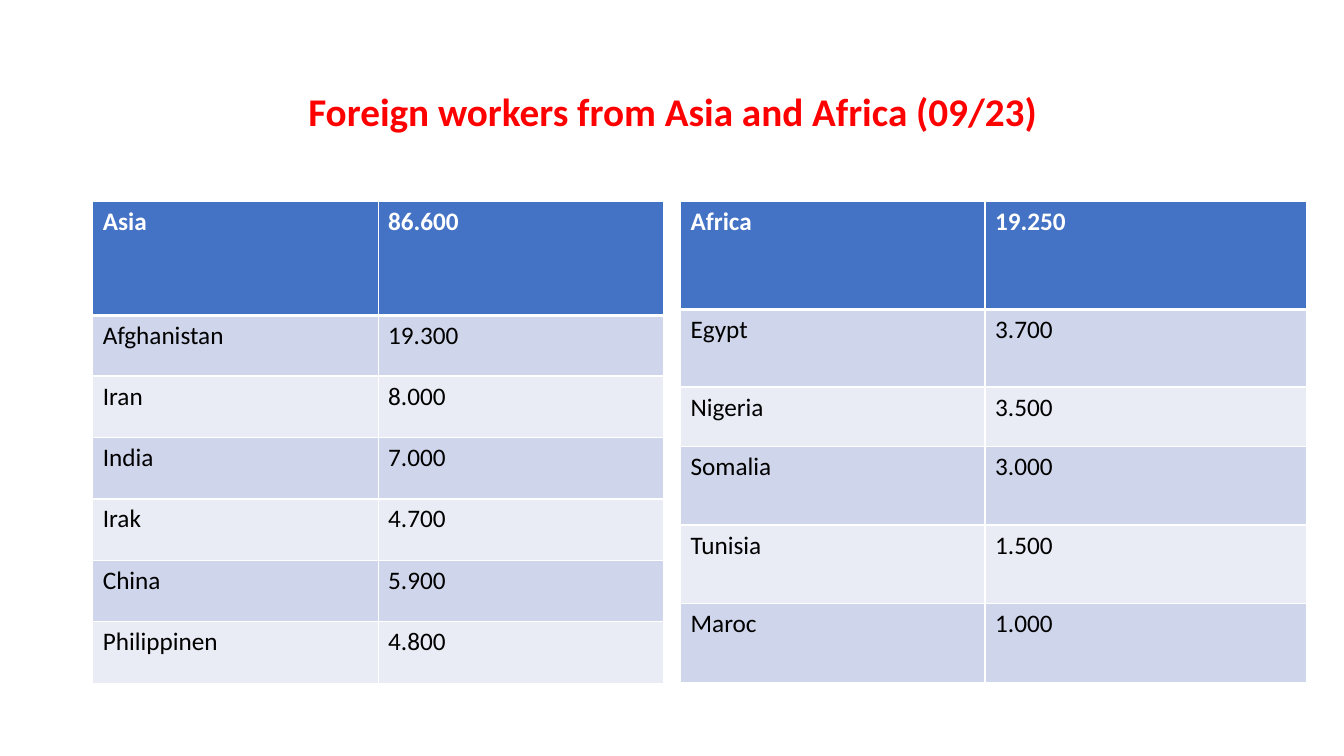
"""Builds a slide comparing foreign workers from Asia and Africa."""
from lxml import etree
from pptx import Presentation
from pptx.dml.color import RGBColor
from pptx.enum.text import MSO_ANCHOR, PP_ALIGN
from pptx.oxml.ns import qn
from pptx.util import Inches, Pt

TITLE = "Foreign workers from Asia and Africa (09/23)"
REGIONS = [
    {
        "left": 0.92,
        "columns": [2.83, 2.83],
        "heights": [1.13, 0.6, 0.61, 0.61, 0.61, 0.61, 0.61],
        "rows": [
            ("Asia", "86.600"),
            ("Afghanistan", "19.300"),
            ("Iran", "8.000"),
            ("India", "7.000"),
            ("Irak", "4.700"),
            ("China", "5.900"),
            ("Philippinen", "4.800"),
        ],
    },
    {
        "left": 6.75,
        "columns": [3.02, 3.19],
        "heights": [1.07, 0.77, 0.59, 0.78, 0.78, 0.78],
        "rows": [
            ("Africa", "19.250"),
            ("Egypt", "3.700"),
            ("Nigeria", "3.500"),
            ("Somalia", "3.000"),
            ("Tunisia", "1.500"),
            ("Maroc", "1.000"),
        ],
    },
]

FONT = "Calibri"
RED = RGBColor(0xFF, 0x00, 0x00)
WHITE = RGBColor(0xFF, 0xFF, 0xFF)
BLACK = RGBColor(0x00, 0x00, 0x00)
HEADER_BLUE = RGBColor(0x44, 0x72, 0xC4)
BANDS = [RGBColor(0xE9, 0xEB, 0xF5), RGBColor(0xCF, 0xD5, 0xEA)]
CENTER = PP_ALIGN.CENTER
MIDDLE = MSO_ANCHOR.MIDDLE
TABLE_TOP = 2
THIN, THICK = Pt(1), Pt(3)


def style_text(frame, size, color, bold):
    font = frame.paragraphs[0].runs[0].font
    font.name, font.size, font.bold = FONT, Pt(size), bold
    font.color.rgb = color


def add_title(slide):
    box = slide.shapes.add_textbox(Inches(0.92), Inches(0.4), Inches(11.5), Inches(1.45))
    frame = box.text_frame
    frame.word_wrap = True
    frame.vertical_anchor = MIDDLE
    frame.text = TITLE
    frame.paragraphs[0].alignment = CENTER
    frame.paragraphs[0].line_spacing = 0.9
    style_text(frame, 28, RED, True)


def set_borders(cell, row_index):
    widths = {
        "a:lnL": THIN,
        "a:lnR": THIN,
        "a:lnT": THICK if row_index == 1 else THIN,
        "a:lnB": THICK if row_index == 0 else THIN,
    }
    properties = cell._tc.get_or_add_tcPr()
    for tag, width in widths.items():
        line = etree.SubElement(properties, qn(tag), w=str(width))
        fill = etree.SubElement(line, qn("a:solidFill"))
        etree.SubElement(fill, qn("a:srgbClr"), val=str(WHITE))


def add_region(slide, region):
    rows, columns, heights = region["rows"], region["columns"], region["heights"]
    table = slide.shapes.add_table(
        len(rows), len(columns), Inches(region["left"]), Inches(TABLE_TOP),
        Inches(sum(columns)), Inches(sum(heights)),
    ).table
    for column, width in zip(table.columns, columns):
        column.width = Inches(width)
    for row_index, values in enumerate(rows):
        table.rows[row_index].height = Inches(heights[row_index])
        header = row_index == 0
        for column_index, value in enumerate(values):
            cell = table.cell(row_index, column_index)
            cell.text_frame.text = value
            style_text(cell.text_frame, 18, WHITE if header else BLACK, header)
            set_borders(cell, row_index)
            cell.fill.solid()
            cell.fill.fore_color.rgb = HEADER_BLUE if header else BANDS[row_index % 2]


def main():
    deck = Presentation()
    deck.slide_width, deck.slide_height = Inches(13.33), Inches(7.5)
    slide = deck.slides.add_slide(deck.slide_layouts[6])
    add_title(slide)
    for region in REGIONS:
        add_region(slide, region)
    deck.save("out.pptx")


if __name__ == "__main__":
    main()
